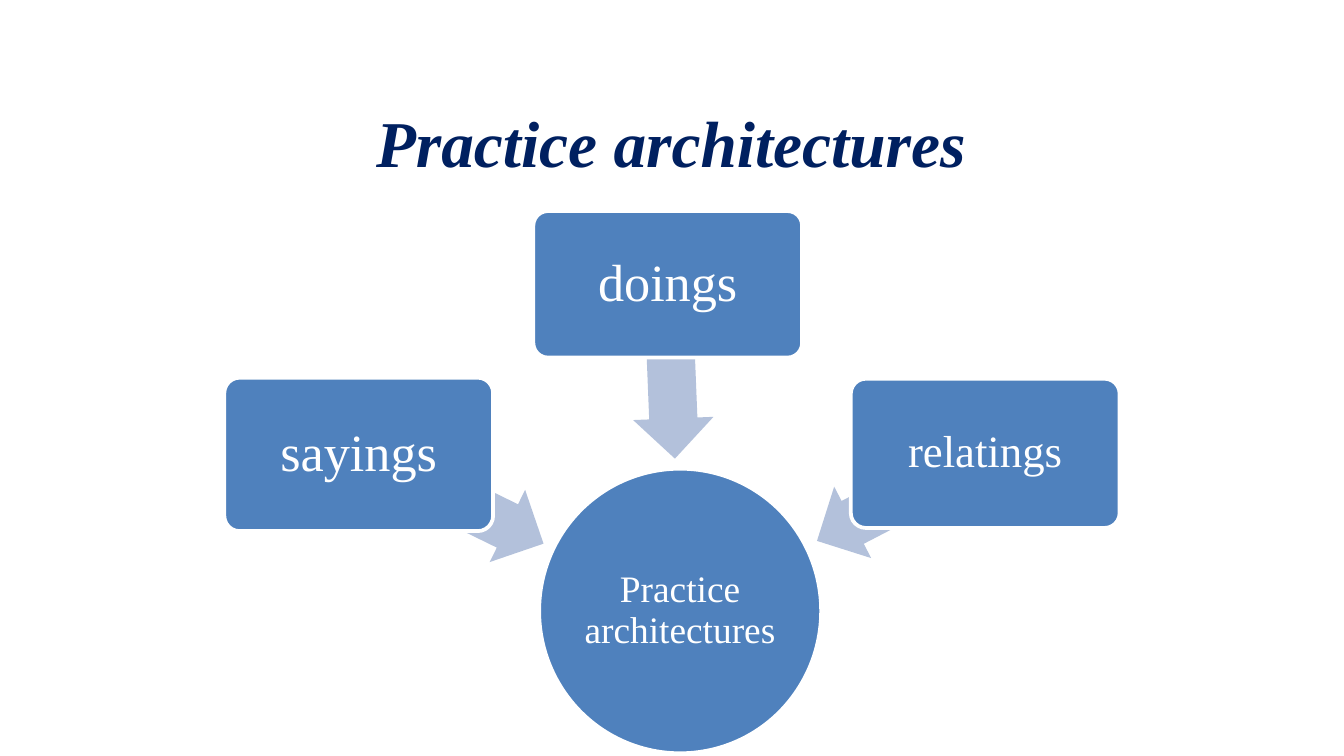
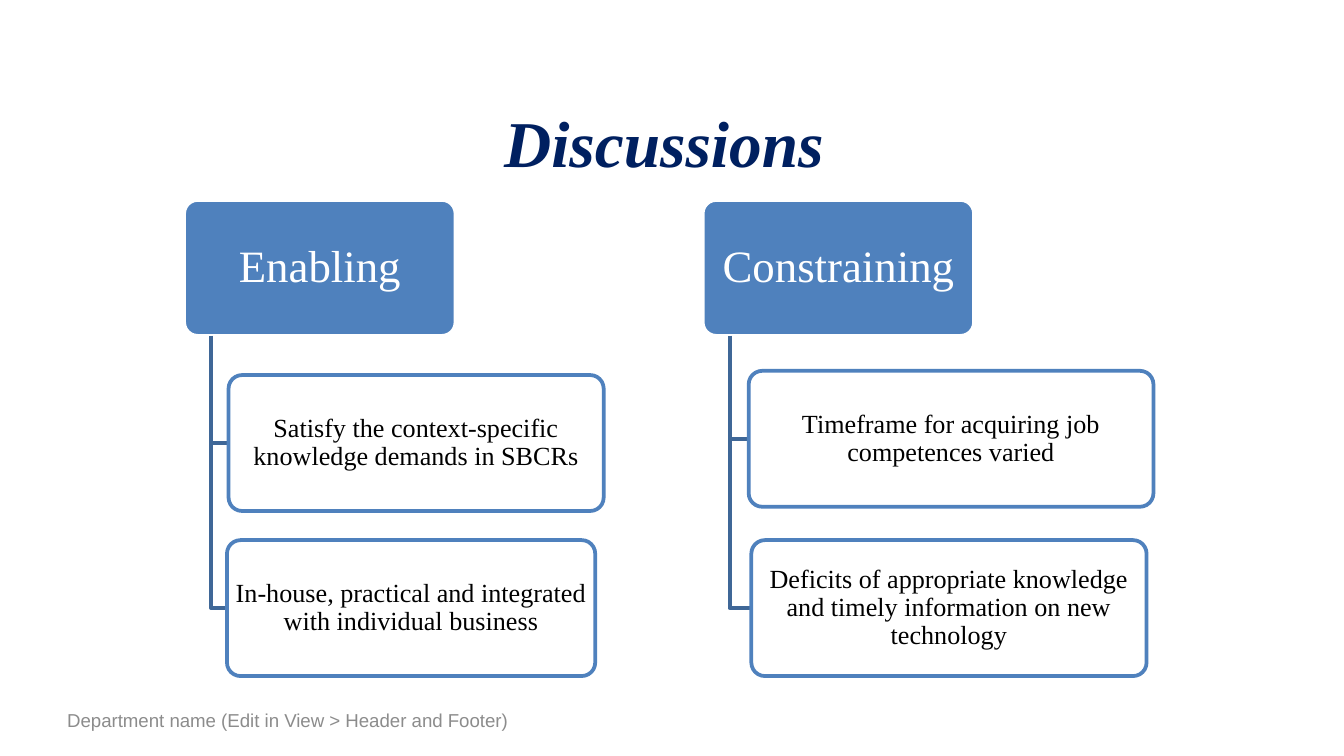
from typing import NamedTuple, Optional

from lxml.etree import SubElement
from pptx import Presentation
from pptx.dml.color import RGBColor
from pptx.enum.shapes import MSO_SHAPE
from pptx.enum.text import MSO_ANCHOR, PP_ALIGN
from pptx.oxml.ns import qn
from pptx.shapes.autoshape import Shape
from pptx.slide import Slide
from pptx.util import Cm, Pt

SERIF, SANS = "Times New Roman", "Arial"
NAVY, BLUE, STEEL = "002060", "4F81BD", "3F6797"
PALE, GREY, WHITE, BLACK = "B3C1DB", "8C8C8C", "FFFFFF", "000000"
LINE_WIDTH = 2
CORNER = 0.1
ROW_HEIGHT = 2.57
HEADER_TOP, HEADER_WIDTH = 3.78, 5.13
STEM_INDENT = 0.51


class Frame(NamedTuple):
    """Left, top, width and height in centimetres."""
    left: float
    top: float
    width: float
    height: float

    def lengths(self) -> list[Cm]:
        return [Cm(v) for v in self]


class TextStyle(NamedTuple):
    font: dict
    color: str
    inset_x: float = 0
    inset_y: float = 0
    align: PP_ALIGN = PP_ALIGN.CENTER
    spacing: float = 0.9
    anchor: MSO_ANCHOR = MSO_ANCHOR.MIDDLE


class Influence(NamedTuple):
    """A box and the arrow that leads from it to the circle."""
    text: str
    size: int
    inset: float
    box: Frame
    arrow: Frame
    rotation: float


class Item(NamedTuple):
    text: str
    left: float
    top: float
    width: float


class Column(NamedTuple):
    heading: str
    left: float
    items: tuple[Item, ...]


def serif(size: int, color: str, inset_x: float, inset_y: float) -> TextStyle:
    return TextStyle({"name": SERIF, "size": Pt(size)}, color, inset_x, inset_y)


TITLE = TextStyle({"name": SERIF, "size": Pt(35), "bold": True, "italic": True},
                  NAVY, spacing=0.8, anchor=MSO_ANCHOR.TOP)
FOOTER = TextStyle({"name": SANS, "size": Pt(10)}, GREY,
                   align=PP_ALIGN.LEFT, spacing=1.0)
HEADING = serif(24, WHITE, 0.13, 0.08)
ITEM = serif(14, BLACK, 0.08, 0.05)
HUB = serif(20, WHITE, 0.03, 0.03)

HUB_FRAME = Frame(10.19, 8.86, 5.33, 5.38)
INFLUENCES = (
    Influence("sayings", 28, 0.15, Frame(4.24, 7.14, 5.08, 2.9),
              Frame(6.58, 8.66, 3.89, 1.52), 206.1),
    Influence("doings", 28, 0.15, Frame(10.08, 3.99, 5.08, 2.77),
              Frame(11.05, 6.27, 3.28, 1.52), 267.7),
    Influence("relatings", 24, 0.13, Frame(16.08, 7.16, 5.08, 2.82),
              Frame(15.24, 8.64, 3.58, 1.52), 332.6),
)
COLUMNS = (
    Column("Enabling", 3.48, (
        Item("Satisfy the context-specific knowledge demands in SBCRs",
             4.32, 7.09, 7.09),
        Item("In-house, practical and integrated with individual business",
             4.29, 10.21, 6.96),
    )),
    Column("Constraining", 13.28, (
        Item("Timeframe for acquiring job competences varied",
             14.15, 7.01, 7.65),
        Item("Deficits of appropriate knowledge and timely information "
             "on new technology", 14.2, 10.21, 7.47),
    )),
)


def rgb(color: str) -> RGBColor:
    return RGBColor.from_string(color)


def set_text(sp: Shape, text: str, style: TextStyle) -> None:
    tf = sp.text_frame
    frame_format = {
        "word_wrap": True, "vertical_anchor": style.anchor,
        "margin_left": Cm(style.inset_x), "margin_right": Cm(style.inset_x),
        "margin_top": Cm(style.inset_y), "margin_bottom": Cm(style.inset_y),
    }
    for name, value in frame_format.items():
        setattr(tf, name, value)
    p = tf.paragraphs[0]
    p.alignment, p.line_spacing = style.align, style.spacing
    r = p.add_run()
    r.text = text
    for name, value in style.font.items():
        setattr(r.font, name, value)
    r.font.color.rgb = rgb(style.color)


def paint(sp: Shape, fill: Optional[str], line: Optional[str]) -> None:
    sp.shadow.inherit = False
    if fill:
        sp.fill.solid()
        sp.fill.fore_color.rgb = rgb(fill)
    else:
        sp.fill.background()
    if line:
        sp.line.color.rgb = rgb(line)
        sp.line.width = Pt(LINE_WIDTH)
    else:
        sp.line.fill.background()


def add_label(s: Slide, text: str, frame: Frame, style: TextStyle) -> None:
    set_text(s.shapes.add_textbox(*frame.lengths()), text, style)


def add_box(s: Slide, text: str, frame: Frame, style: TextStyle,
            fill: str = BLUE, line: str = WHITE) -> Shape:
    sp = s.shapes.add_shape(MSO_SHAPE.ROUNDED_RECTANGLE, *frame.lengths())
    sp.adjustments[0] = CORNER
    paint(sp, fill, line)
    set_text(sp, text, style)
    return sp


def add_arrow(s: Slide, frame: Frame, rotation: float) -> None:
    sp = s.shapes.add_shape(MSO_SHAPE.LEFT_ARROW, *frame.lengths())
    sp.adjustments[0], sp.adjustments[1] = 0.6, 0.5
    sp.rotation = rotation
    paint(sp, PALE, None)


def add_branch(s: Slide, stem_x: float, item: Item) -> None:
    """Line down from the heading, then across to the item's left side."""
    x, y = Cm(stem_x), Cm(item.top + ROW_HEIGHT / 2)
    builder = s.shapes.build_freeform(x, Cm(HEADER_TOP + ROW_HEIGHT))
    builder.add_line_segments([(x, y), (Cm(item.left), y)], close=False)
    paint(builder.convert_to_shape(), None, STEEL)


def set_opacity(sp: Shape, percent: int) -> None:
    color = sp.fill._xPr.find(qn("a:solidFill")).find(qn("a:srgbClr"))
    SubElement(color, qn("a:alpha")).set("val", str(percent * 1000))


def add_column(s: Slide, column: Column) -> None:
    add_box(s, column.heading,
            Frame(column.left, HEADER_TOP, HEADER_WIDTH, ROW_HEIGHT), HEADING)
    for item in column.items:
        add_branch(s, column.left + STEM_INDENT, item)
        sp = add_box(s, item.text,
                     Frame(item.left, item.top, item.width, ROW_HEIGHT),
                     ITEM, WHITE, BLUE)
        set_opacity(sp, 90)


def add_titled_slide(prs: Presentation, title: str, width: float) -> Slide:
    s = prs.slides.add_slide(prs.slide_layouts[6])
    add_label(s, title, Frame(1.27, 2.21, width, 1.57), TITLE)
    return s


def build_architectures(prs: Presentation) -> None:
    s = add_titled_slide(prs, "Practice architectures", 22.83)
    hub = s.shapes.add_shape(MSO_SHAPE.OVAL, *HUB_FRAME.lengths())
    paint(hub, BLUE, WHITE)
    set_text(hub, "Practice architectures", HUB)
    for influence in INFLUENCES:
        add_arrow(s, influence.arrow, influence.rotation)
        add_box(s, influence.text, influence.box,
                serif(influence.size, WHITE, influence.inset, influence.inset))


def build_discussions(prs: Presentation) -> None:
    s = add_titled_slide(prs, "Discussions", 22.56)
    add_label(s, "Department name (Edit in View > Header and Footer)",
              Frame(1.27, 13.23, 21.77, 0.76), FOOTER)
    for column in COLUMNS:
        add_column(s, column)


def main() -> None:
    prs = Presentation()
    prs.slide_width, prs.slide_height = Cm(25.4), Cm(14.29)
    build_architectures(prs)
    build_discussions(prs)
    prs.save("out.pptx")


if __name__ == "__main__":
    main()
